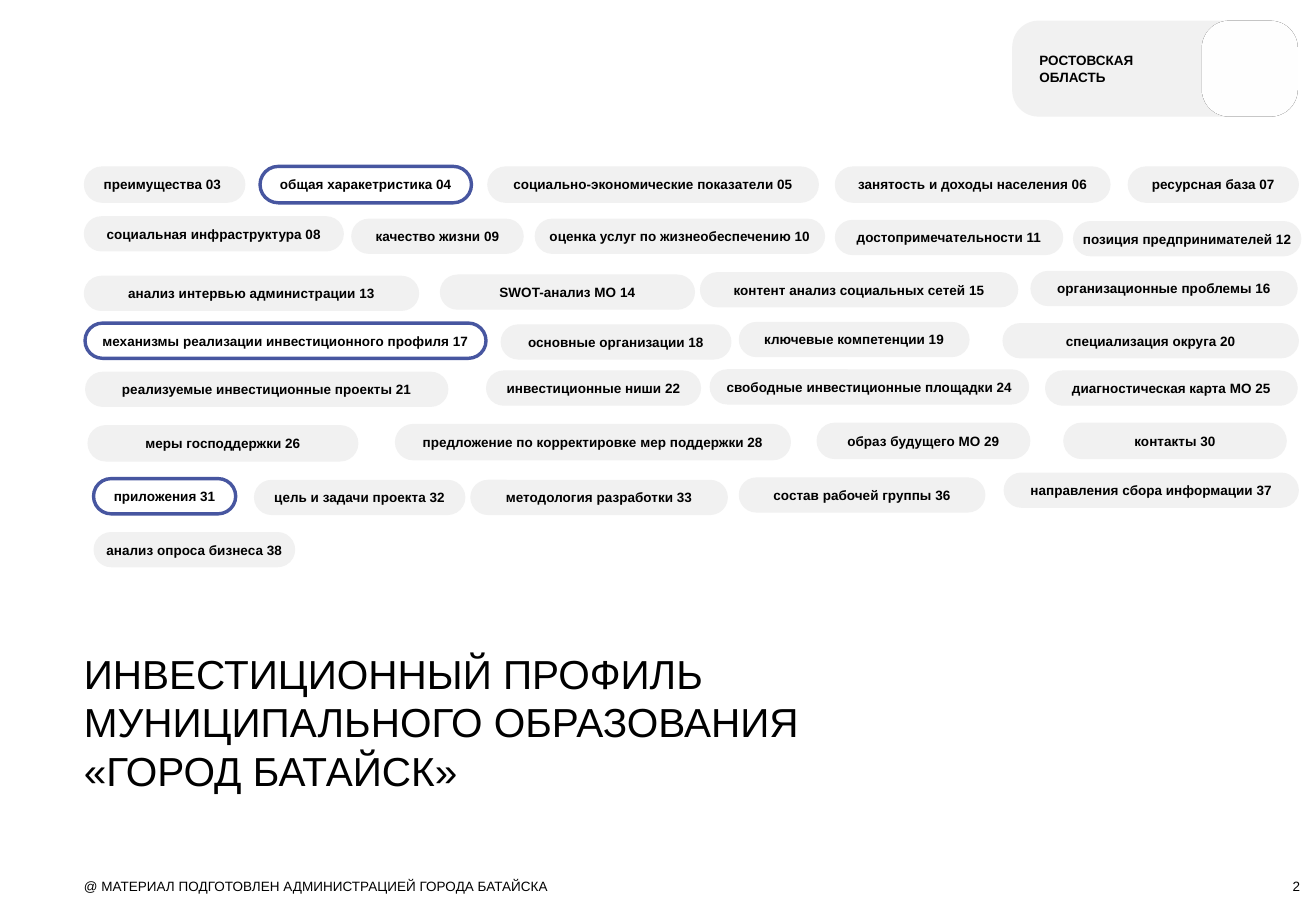
from lxml.etree import SubElement
from pptx import Presentation
from pptx.dml.color import RGBColor as Rgb
from pptx.enum.shapes import MSO_SHAPE as Kind
from pptx.enum.text import MSO_ANCHOR as Anchor, PP_ALIGN as Align
from pptx.oxml.ns import qn
from pptx.util import Emu, Pt

PX = 9144
COLORS = {"ink": "000000", "pill": "F1F1F1", "mark": "4756A0", "card": "FEFEFE"}
ROWS = [
    (30, [
        (69, 137, 133, "преимущества 03"),
        (214, 137, 174, "общая харакетристика 04"),
        (401, 137, 273, "социально-экономические показатели 05"),
        (687, 137, 227, "занятость и доходы населения 06"),
        (928, 137, 141, "ресурсная база 07"),
    ]),
    (29, [
        (69, 178, 214, "социальная инфраструктура 08"),
        (289, 180, 142, "качество жизни 09"),
        (440, 180, 239, "оценка услуг по жизнеобеспечению 10"),
        (687, 181, 188, "достопримечательности 11"),
        (883, 182, 188, "позиция предпринимателей 12"),
    ]),
    (29, [
        (69, 227, 276, "анализ интервью администрации 13"),
        (362, 226, 210, "SWOT-анализ МО 14"),
        (576, 224, 262, "контент анализ социальных сетей 15"),
        (848, 223, 220, "организационные проблемы 16"),
    ]),
    (29, [
        (70, 266, 330, "механизмы реализации инвестиционного профиля 17"),
        (412, 267, 190, "основные организации 18"),
        (608, 265, 190, "ключевые компетенции 19"),
        (825, 266, 244, "специализация округа 20"),
    ]),
    (29, [
        (70, 306, 299, "реализуемые инвестиционные проекты 21"),
        (400, 305, 177, "инвестиционные ниши 22"),
        (584, 304, 263, "свободные инвестиционные площадки 24"),
        (860, 305, 208, "диагностическая карта МО 25"),
    ]),
    (30, [
        (72, 350, 223, "меры господдержки 26"),
        (325, 349, 326, "предложение по корректировке мер поддержки 28"),
        (672, 348, 176, "образ будущего МО 29"),
        (875, 348, 184, "контакты 30"),
    ]),
    (29, [
        (77, 394, 117, "приложения 31"),
        (209, 395, 174, "цель и задачи проекта 32"),
        (387, 395, 212, "методология разработки 33"),
        (608, 393, 203, "состав рабочей группы 36"),
        (826, 389, 243, "направления сбора информации 37"),
    ]),
    (29, [(77, 438, 166, "анализ опроса бизнеса 38")]),
]
MARKED = {"04", "17", "31"}


def set_all(obj, vals):
    for key, val in vals.items():
        setattr(obj, key, val)


def paint(form, name):
    form.solid()
    form.fore_color.rgb = Rgb.from_string(COLORS[name])


def write(shape, lines, size=8, bold=False, align=Align.LEFT,
          anchor=Anchor.MIDDLE, pad=(0, 0, 0, 0)):
    frame = shape.text_frame
    sides = ("margin_left", "margin_top", "margin_right", "margin_bottom")
    set_all(frame, {"word_wrap": True, "vertical_anchor": anchor})
    set_all(frame, {side: Emu(val * PX) for side, val in zip(sides, pad)})
    frame.text = "\n".join(lines)
    for para in frame.paragraphs:
        para.alignment = align
        set_all(para.font, {"name": "Arial", "size": Pt(size), "bold": bold})
        paint(para.font.fill, "ink")


def add_round(slide, box, curve, fill=None):
    shape = slide.shapes.add_shape(Kind.ROUNDED_RECTANGLE, *(Emu(val * PX) for val in box))
    shape.adjustments[0] = curve
    shape.shadow.inherit = False
    shape.line.fill.background()
    if fill:
        paint(shape.fill, fill)
    else:
        shape.fill.background()
    return shape


def add_pill(slide, box, text):
    marked = text[-2:] in MARKED
    pill = add_round(slide, box, 0.5, None if marked else "pill")
    if marked:
        paint(pill.line.fill, "mark")
        pill.line.width = Pt(2)
    first = text.endswith("03")
    write(pill, [text], bold=True, align=Align.LEFT if first else Align.CENTER,
          pad=(12 if first else 0, 0, 0, 0))


def add_text(slide, box, lines, **style):
    area = slide.shapes.add_textbox(*(Emu(val * PX) for val in box))
    write(area, lines, **style)


def add_shade(shape):
    effects = shape._element.spPr.find(qn("a:effectLst"))
    shade = SubElement(effects, qn("a:outerShdw"), blurRad="0", dist="0", dir="0")
    color = SubElement(shade, qn("a:srgbClr"), val=COLORS["ink"])
    SubElement(color, qn("a:alpha"), val="93000")


def main():
    deck = Presentation()
    set_all(deck, {"slide_width": Emu(1083 * PX), "slide_height": Emu(750 * PX)})
    slide = deck.slides.add_slide(deck.slide_layouts[6])
    for high, pills in ROWS:
        for left, top, wide, text in pills:
            add_pill(slide, (left, top, wide, high), text)
    add_text(slide, (991, 723, 79, 13), ["2"], align=Align.RIGHT, anchor=Anchor.BOTTOM)
    add_text(slide, (69, 723, 800, 13),
             ["@ МАТЕРИАЛ ПОДГОТОВЛЕН АДМИНИСТРАЦИЕЙ ГОРОДА БАТАЙСКА"], anchor=Anchor.TOP)
    add_text(slide, (69, 534, 800, 119),
             ["ИНВЕСТИЦИОННЫЙ ПРОФИЛЬ", "МУНИЦИПАЛЬНОГО ОБРАЗОВАНИЯ", "«ГОРОД БАТАЙСК»"],
             size=24, anchor=Anchor.TOP)
    region = add_round(slide, (833, 17, 235, 79), 0.275, "pill")
    write(region, ["РОСТОВСКАЯ ОБЛАСТЬ"], bold=True, pad=(16, 5, 79, 5))
    add_shade(add_round(slide, (989, 17, 79, 79), 0.286, "card"))
    deck.save("out.pptx")


if __name__ == "__main__":
    main()
